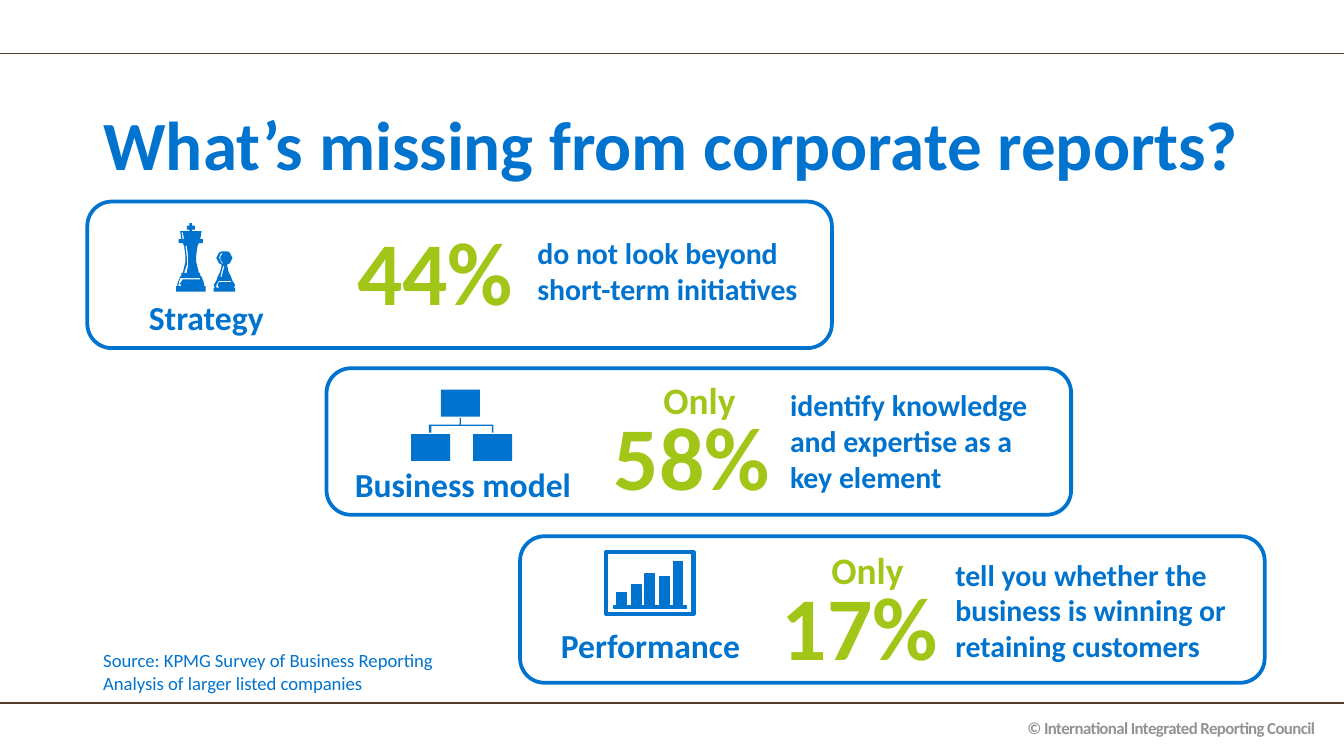
from lxml import etree
from pptx import Presentation
from pptx import util as u
from pptx.dml.color import RGBColor
from pptx.enum import shapes, text
from pptx.oxml.ns import qn

PX = 9144  # EMU per px, 100 px to the inch
WIDTH = 1000
BLUE = RGBColor(0x00, 0x73, 0xCF)
GREEN = RGBColor(0xA2, 0xC6, 0x17)
BROWN = RGBColor(0x56, 0x3B, 0x29)
GREY = RGBColor(0x93, 0x93, 0x93)
FONT = "Calibri"
LEFT, CENTER, RIGHT = text.PP_ALIGN.LEFT, text.PP_ALIGN.CENTER, text.PP_ALIGN.RIGHT
RECT = shapes.MSO_SHAPE.RECTANGLE
ROUNDED = shapes.MSO_SHAPE.ROUNDED_RECTANGLE


class Sketch:
    """Holds the style and the current slide."""

    def __init__(self, deck):
        self.page = deck.slides.add_slide(deck.slide_layouts[5])

    def style(self, para, size, color, bold=True, align=LEFT):
        para.alignment = align
        font = para.font
        font.name, font.size, font.bold = FONT, u.Pt(size), bold
        font.color.rgb = color

    def title(self, words, *place):
        box = self.page.shapes.title
        box.left, box.top, box.width, box.height = (n * PX for n in place)
        frame = box.text_frame
        frame.text = words
        frame.auto_size = text.MSO_AUTO_SIZE.NONE
        frame.vertical_anchor = text.MSO_ANCHOR.MIDDLE
        self.style(frame.paragraphs[0], 37, BLUE)

    def words(self, place, lines, color=BLUE, bold=True, align=LEFT, after=0):
        """Add a text box; lines holds (words, size) pairs."""
        box = self.page.shapes.add_textbox(*(n * PX for n in place))
        frame = box.text_frame
        frame.word_wrap = True
        for i, (line, size) in enumerate(lines):
            para = frame.paragraphs[0] if i == 0 else frame.add_paragraph()
            para.text = line
            self.style(para, size, color, bold, align)
            if after:
                para.space_after = u.Pt(after)
        return frame

    def paint(self, shape, fill, line=0):
        shape.shadow.inherit = False
        if fill:
            shape.fill.solid()
            shape.fill.fore_color.rgb = BLUE
        else:
            shape.fill.background()
        if line:
            shape.line.color.rgb = BLUE
            shape.line.width = u.Pt(line)
        else:
            shape.line.fill.background()

    def block(self, kind, place, fill=True, line=0):
        shape = self.page.shapes.add_shape(kind, *(n * PX for n in place))
        self.paint(shape, fill, line)

    def outline(self, *contours):
        """Add one filled outline; contours after the first are holes."""
        first = contours[0][0]
        builder = self.page.shapes.build_freeform(*first, scale=PX)
        builder.add_line_segments(contours[0][1:])
        for contour in contours[1:]:
            builder.move_to(*contour[0])
            builder.add_line_segments(contour[1:])
        self.paint(builder.convert_to_shape(), True)

    def rule(self, y):
        line = self.page.shapes.add_connector(
            shapes.MSO_CONNECTOR.STRAIGHT, WIDTH * PX, y * PX, 0, y * PX)
        line.line.color.rgb = BROWN
        line.line.width = u.Pt(0.75)
        etree.SubElement(line._element.spPr, qn("a:effectLst"))


def mirrored(center, profile):
    """Turn a right-hand profile of (offset, y) into a symmetric outline."""
    right = [(center + dx, y) for dx, y in profile]
    return right + [(center - dx, y) for dx, y in reversed(profile)]


def chess_icon(sketch):
    king = mirrored(142, [
        (1, 166), (1, 168), (3, 168), (3, 171), (1, 171), (1, 172), (8, 172),
        (7, 178), (9, 178), (9, 181), (6, 181), (5, 183), (4, 190), (4, 195),
        (6, 203), (7, 203), (7, 205), (8, 206), (10, 211), (10, 213),
        (11, 213), (11, 217)])
    pawn = mirrored(167, [
        (2, 187), (4, 188), (6, 192), (4, 196), (2, 197), (3, 202), (5, 206),
        (6, 209), (8, 212), (7, 214), (8, 214), (8, 217)])
    sketch.outline(
        king,
        [(135, 173), (136, 173), (137, 178), (136, 178)],
        [(138, 183), (139, 183), (140, 191), (140, 197), (139, 203),
         (137, 203), (139, 197), (139, 191)],
        [(133, 211), (134, 207), (149, 207), (149, 208), (136, 208),
         (134, 211), (135, 213), (133, 213)])
    sketch.outline(
        pawn,
        [(166, 188), (164, 189), (163, 192), (165, 196), (166, 196),
         (164, 193), (164, 191)],
        [(164, 206), (166, 198), (167, 198), (165, 206)],
        [(161, 212), (163, 209), (172, 209), (172, 210), (163, 210),
         (162, 212), (163, 214), (161, 214)])


def hierarchy_icon(sketch):
    for left, top in ((306, 323), (352, 323), (328, 290)):
        sketch.block(RECT, (left, top, 29, 20))
    sketch.outline([
        (342, 311), (343, 311), (343, 316), (367, 316), (367, 322), (366, 322),
        (366, 317), (321, 317), (321, 322), (319, 322), (319, 316), (342, 316)])


def bars_icon(sketch):
    sketch.block(RECT, (451, 411, 65, 46), fill=False, line=2.25)
    sketch.block(RECT, (457, 451, 54, 2), line=0.75)
    for left, height in zip((459, 470, 480, 491, 501), (9, 15, 23, 21, 32)):
        sketch.block(RECT, (left, 450 - height, 7, height), line=0.75)


# Each card: corner, label box, number corner, finding box, texts, "Only", icon
CARDS = [
    ((65, 150), (51, 216, 205, 40), (256, 156), (390, 170, 217, 64),
     "Strategy", "44%", "do not look beyond short-term initiatives",
     False, chess_icon),
    ((243, 274), (242, 340, 205, 40), (447, 282), (578, 283, 209, 91),
     "Business model", "58%",
     "identify knowledge and expertise as a key element", True, hierarchy_icon),
    ((387, 399), (363, 460, 242, 40), (572, 409), (701, 409, 252, 91),
     "Performance", "17%",
     "tell you whether the business is winning or retaining customers",
     True, bars_icon),
]


def main():
    deck = Presentation()
    deck.slide_width = WIDTH * PX
    deck.slide_height = WIDTH * PX * 9 // 16
    sketch = Sketch(deck)

    # Frame and title
    sketch.rule(40)
    sketch.rule(523)
    sketch.title("What’s missing from corporate reports?", 67, 70, 875, 72)

    # Cards
    for corner, label_at, number_at, finding_at, label, number, finding, only, icon in CARDS:
        sketch.block(ROUNDED, (*corner, 554, 109), fill=False, line=2)
        lines = [("Only", 20), (number, 48)] if only else [(number, 48)]
        frame = sketch.words((*number_at, 147, 108), lines, GREEN)
        if only:
            frame.paragraphs[0].alignment = CENTER
            for para in frame.paragraphs:
                para.line_spacing = 0.8
        sketch.words(finding_at, [(finding, 16)], after=6)
        sketch.words(label_at, [(label, 18)], align=CENTER, after=6)
        icon(sketch)

    # Source and copyright
    sketch.words((67, 478, 333, 44),
                 [("Source: KPMG Survey of Business Reporting", 10),
                  ("Analysis of larger listed companies", 10)], bold=False)
    footer = sketch.words((665, 529, 323, 25),
                          [("© International Integrated Reporting Council", 9)],
                          GREY, align=RIGHT)
    span = footer.paragraphs[0].runs[0]
    span._r.get_or_add_rPr().set("spc", "-30")

    deck.save("out.pptx")


if __name__ == "__main__":
    main()
